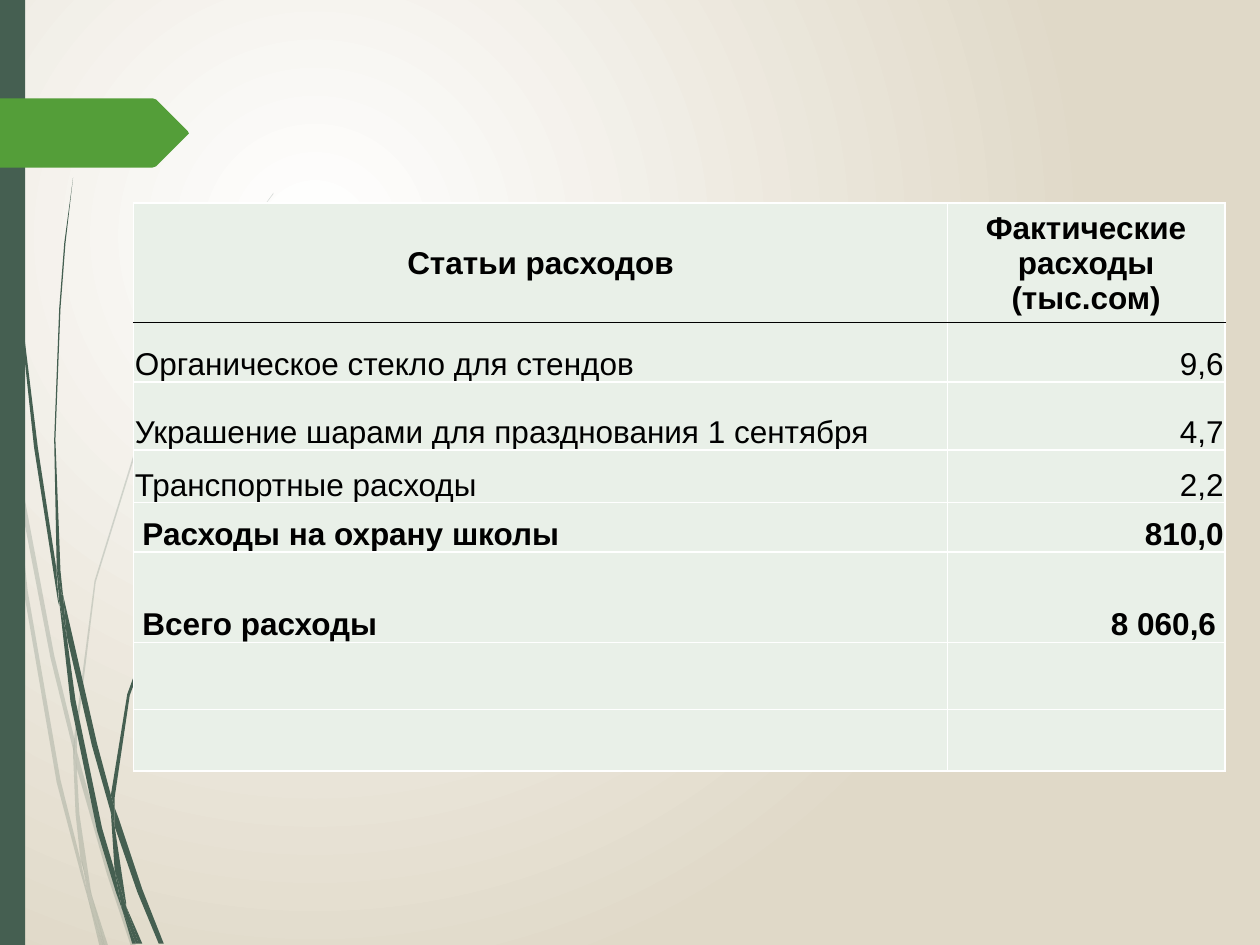
from lxml import etree
from pptx import Presentation
from pptx.dml.color import RGBColor
from pptx.enum.shapes import MSO_SHAPE
from pptx.enum.text import MSO_ANCHOR, PP_ALIGN
from pptx.oxml.ns import qn
from pptx.util import Pt

RECT = MSO_SHAPE.RECTANGLE
MIDDLE, BOTTOM = MSO_ANCHOR.MIDDLE, MSO_ANCHOR.BOTTOM
LEFT, CENTER, RIGHT = PP_ALIGN.LEFT, PP_ALIGN.CENTER, PP_ALIGN.RIGHT

WHITE = RGBColor(0xFF, 0xFF, 0xFF)
BLACK = RGBColor(0, 0, 0)
SAND = RGBColor(0xE0, 0xD9, 0xC8)
PINE = RGBColor(0x45, 0x5F, 0x51)
GREEN = RGBColor(0x54, 0x9E, 0x39)
MINT = RGBColor(0xE9, 0xF0, 0xE8)

UNIT = Pt(0.72)  # outlines are drawn on a grid of 100 units to the inch

PALE_GRASS = [
    [(8, 350), (6, 322), (0, 282), (0, 299), (7, 344)],
    [(40, 522), (59, 599), (59, 586), (43, 520), (10, 345), (12, 376)],
    [(64, 607), (61, 596), (61, 610), (85, 694), (104, 751), (108, 751),
     (88, 692)],
    [(83, 751), (86, 751), (73, 711)],
    [(64, 683), (48, 619), (22, 469), (12, 376), (8, 350), (19, 470),
     (45, 621), (64, 693), (70, 714), (69, 707)],
    [(58, 599), (60, 646), (64, 683), (67, 692), (73, 711), (72, 706),
     (63, 646), (61, 610), (61, 608)],
    [(61, 584), (76, 462), (111, 349), (159, 245), (187, 198), (201, 175),
     (217, 154), (217, 153), (201, 175), (186, 197), (158, 244), (110, 348),
     (75, 461), (59, 584), (59, 586), (61, 596)],
    [(70, 714), (79, 751), (82, 751)],
    [(61, 608), (61, 610), (61, 596), (59, 586), (58, 599)],
    [(67, 692), (65, 683), (69, 707), (70, 714), (82, 751), (83, 751),
     (73, 711)],
]
DARK_GRASS = [
    [(5, 110), (14, 233), (27, 355), (46, 477), (47, 481), (45, 457),
     (45, 453), (30, 355), (15, 232), (6, 109), (4, 48), (3, 0), (2, 0),
     (3, 48)],
    [(73, 592), (88, 645), (88, 633), (88, 631), (77, 590), (50, 472),
     (53, 505)],
    [(94, 649), (91, 641), (91, 656), (109, 708), (126, 749), (130, 749),
     (113, 706)],
    [(91, 691), (81, 657), (60, 556), (53, 505), (47, 477), (56, 557),
     (77, 659), (92, 708), (97, 722), (96, 717)],
    [(50, 472), (48, 453), (44, 349), (48, 245), (52, 193), (58, 141),
     (51, 193), (47, 245), (43, 349), (45, 449), (49, 472)],
    [(110, 749), (113, 749), (100, 719)],
    [(47, 477), (53, 505), (50, 472), (49, 472), (45, 449), (45, 453)],
    [(91, 633), (103, 552), (131, 476), (169, 406), (191, 374), (203, 359),
     (216, 344), (215, 344), (203, 358), (191, 373), (168, 405), (129, 474),
     (101, 551), (88, 631), (91, 641)],
    [(97, 722), (105, 749), (108, 749)],
    [(88, 645), (91, 691), (96, 706), (100, 719), (100, 716), (91, 656),
     (90, 651)],
    [(88, 645), (90, 651), (91, 656), (91, 641), (88, 631), (88, 633)],
    [(96, 706), (91, 691), (96, 717), (97, 722), (108, 749), (110, 749),
     (100, 719)],
]
ARROW = [(0, 78), (121, 78), (124, 79), (149, 104), (149.5, 105.5),
         (149, 107), (124, 132), (121, 133), (0, 133)]

HEADS = ["Статьи расходов", "Фактические расходы (тыс.сом)"]
COSTS = [
    ("Органическое стекло для стендов", "9,6"),
    ("Украшение шарами для празднования 1 сентября", "4,7"),
    ("Транспортные расходы", "2,2"),
    ("Расходы на охрану школы", "810,0"),
    ("Всего расходы", "8 060,6"),
]
BOLD_ROWS = (4, 5)
PADDED = [(4, 0), (5, 0), (5, 1)]
WIDTHS = [465, 158.5]
HEIGHTS = [68.4, 33.8, 38.9, 30.2, 28.1, 51.8, 38.2, 35.3]


def paint(shape, color, alpha=None):
    shape.shadow.inherit = False
    shape.line.fill.background()
    shape.fill.solid()
    shape.fill.fore_color.rgb = color
    if alpha:
        clr = shape._element.spPr.find(".//" + qn("a:srgbClr"))
        etree.SubElement(clr, qn("a:alpha"), val=str(alpha * 1000))


def add_outline(shapes, points, color, alpha=None):
    pen = shapes.build_freeform(*points[0], scale=UNIT)
    pen.add_line_segments(points[1:], close=True)
    paint(pen.convert_to_shape(), color, alpha)


def add_grass(slide, blades, alpha=None):
    group = slide.shapes.add_group_shape()
    for blade in blades:
        add_outline(group.shapes, blade, PINE, alpha)


def set_back(slide):
    """Fill the background with a round gradient, white near the top left."""
    fill = slide.background.fill
    fill.gradient()
    for stop, color in zip(fill.gradient_stops, (WHITE, SAND)):
        stop.color.rgb = color
    grad = slide._element.find(".//" + qn("a:gradFill"))
    grad.remove(grad.find(qn("a:lin")))
    ring = etree.SubElement(grad, qn("a:path"), path="circle")
    etree.SubElement(ring, qn("a:fillToRect"),
                     l="50000", t="50000", r="100000", b="100000")


def set_edges(cell, top, bottom):
    props = cell._tc.get_or_add_tcPr()
    edges = {"L": WHITE, "R": WHITE, "T": top, "B": bottom}
    for side, color in edges.items():
        line = etree.SubElement(props, qn("a:ln" + side), w=str(Pt(1)))
        fill = etree.SubElement(line, qn("a:solidFill"))
        etree.SubElement(fill, qn("a:srgbClr"), val=str(color))


def style_cell(cell, row):
    set_edges(cell, BLACK if row == 1 else WHITE, BLACK if row == 0 else WHITE)
    cell.fill.solid()
    cell.fill.fore_color.rgb = MINT


def write_cell(cell, text, align, bold, anchor, padded):
    side = Pt(5) if padded else Pt(0.7)
    cell.margin_left = cell.margin_right = side
    cell.margin_top = Pt(0) if padded else Pt(0.7)
    cell.margin_bottom = Pt(0)
    cell.vertical_anchor = anchor
    para = cell.text_frame.paragraphs[0]
    para.alignment = align
    if padded:
        para.line_spacing = 1.15
    run = para.add_run()
    run.text = text
    font = run.font
    font.name, font.size, font.bold = "Arial", Pt(18), bold
    font.color.rgb = BLACK


def add_costs(slide):
    frame = slide.shapes.add_table(len(HEIGHTS), len(WIDTHS), Pt(76.4), Pt(116),
                                   Pt(sum(WIDTHS)), Pt(sum(HEIGHTS)))
    table = frame.table
    table.first_row = table.horz_banding = False
    for col, width in zip(table.columns, WIDTHS):
        col.width = Pt(width)
    for num, height in enumerate(HEIGHTS):
        table.rows[num].height = Pt(height)
        for cell in table.rows[num].cells:
            style_cell(cell, num)
    for col, text in enumerate(HEADS):
        write_cell(table.cell(0, col), text, CENTER, True, MIDDLE, False)
    for row, texts in enumerate(COSTS, 1):
        for col, text in enumerate(texts):
            write_cell(table.cell(row, col), text, (LEFT, RIGHT)[col],
                       row in BOLD_ROWS, BOTTOM, (row, col) in PADDED)


def main():
    deck = Presentation()
    deck.slide_width, deck.slide_height = Pt(720), Pt(540)
    slide = deck.slides.add_slide(deck.slide_layouts[6])
    set_back(slide)
    add_grass(slide, PALE_GRASS, 20)
    add_grass(slide, DARK_GRASS)
    paint(slide.shapes.add_shape(RECT, 0, 0, Pt(14.4), Pt(540)), PINE)
    add_outline(slide.shapes, ARROW, GREEN)
    add_costs(slide)
    deck.save("out.pptx")


if __name__ == "__main__":
    main()
